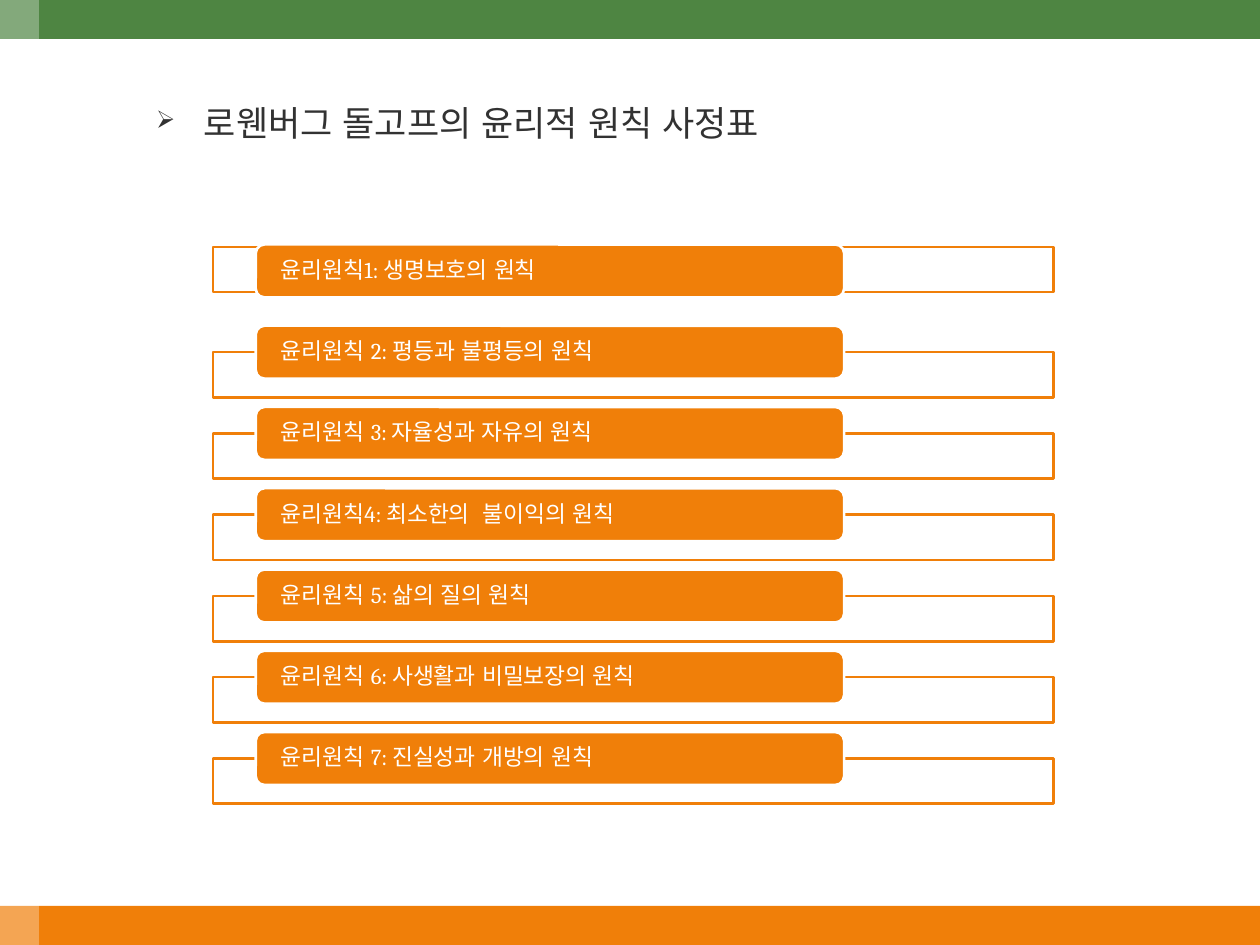
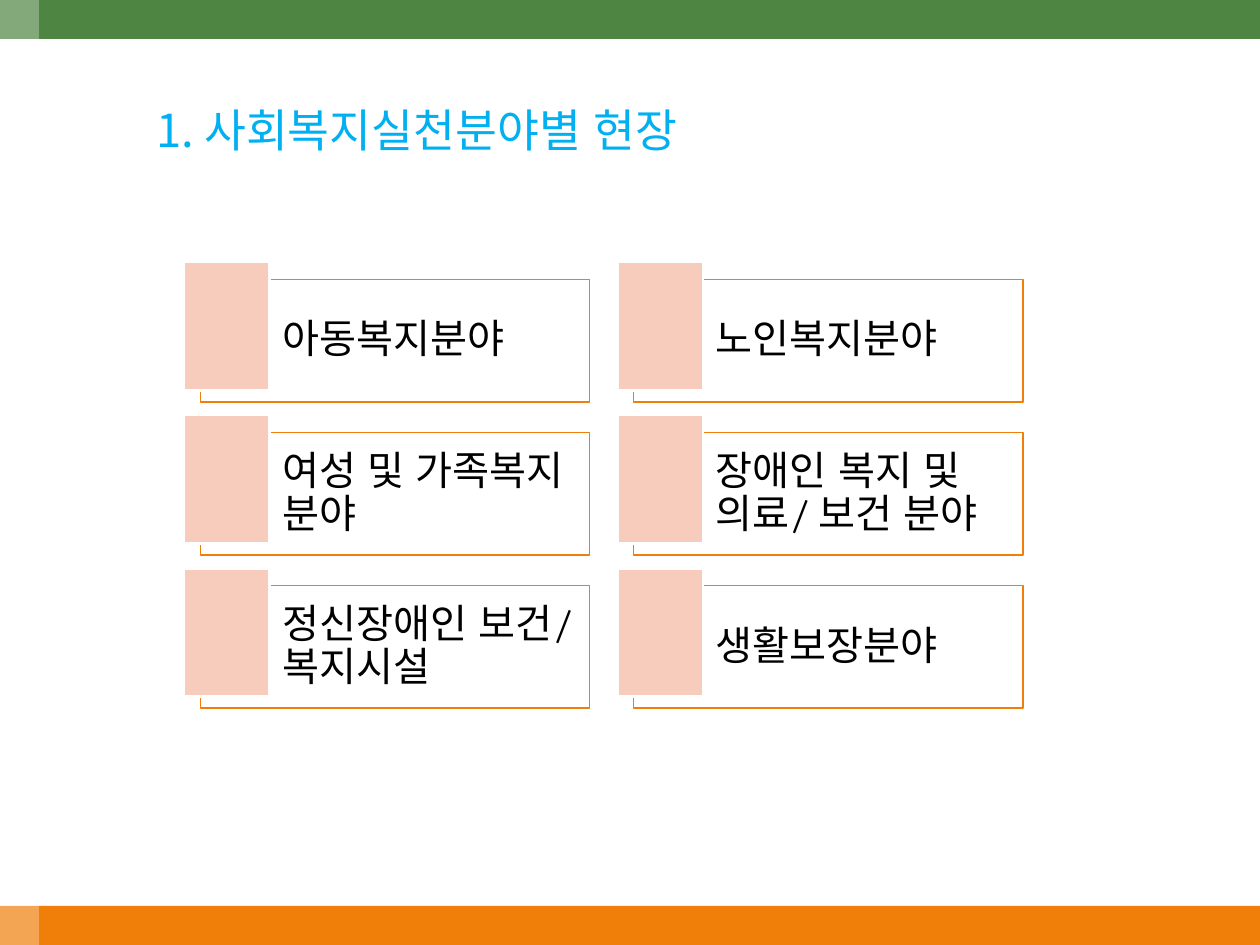
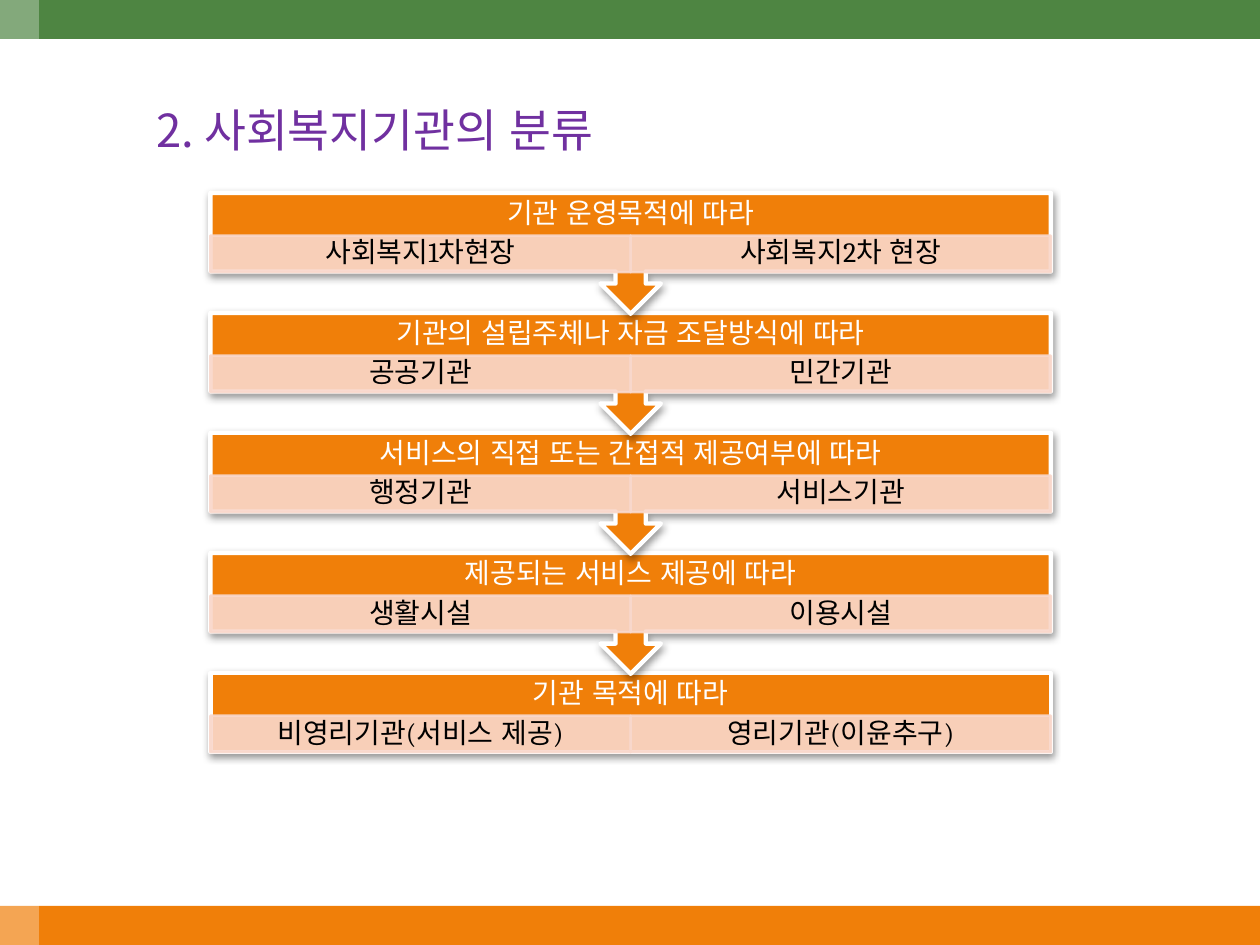
"""Build three slides on social work ethics, practice fields and agency types."""
from lxml import etree
from pptx import Presentation
from pptx.dml.color import RGBColor
from pptx.enum import lang, shapes, text
from pptx.oxml import ns
from pptx.util import Inches, Pt

HANGUL_FONT = "Noto Sans CJK KR"
BODY_FONT = "Cambria"
ORANGE = RGBColor(0xF0, 0x7F, 0x09)
GREEN = RGBColor(0x4E, 0x85, 0x42)
WHITE = RGBColor(0xFF, 0xFF, 0xFF)
BLACK = RGBColor(0, 0, 0)
CHARCOAL = RGBColor(0x32, 0x32, 0x32)
SKY = RGBColor(0x00, 0xB0, 0xF0)
PURPLE = RGBColor(0x70, 0x30, 0xA0)
PEACH = RGBColor(0xF8, 0xCC, 0xBD)
PALE_PEACH = RGBColor(0xF9, 0xD8, 0xCC)

PRINCIPLES = [
    "윤리원칙1: 생명보호의 원칙",
    "윤리원칙 2: 평등과 불평등의 원칙",
    "윤리원칙 3: 자율성과 자유의 원칙",
    "윤리원칙4: 최소한의  불이익의 원칙",
    "윤리원칙 5: 삶의 질의 원칙",
    "윤리원칙 6: 사생활과 비밀보장의 원칙",
    "윤리원칙 7: 진실성과 개방의 원칙",
]
FIELDS = [
    "아동복지분야", "노인복지분야",
    "여성 및 가족복지 분야", "장애인 복지 및 의료/ 보건 분야",
    "정신장애인 보건/ 복지시설", "생활보장분야",
]
CRITERIA = [
    ("기관 운영목적에 따라", ("사회복지1차현장", "사회복지2차 현장")),
    ("기관의 설립주체나 자금 조달방식에 따라", ("공공기관", "민간기관")),
    ("서비스의 직접 또는 간접적 제공여부에 따라", ("행정기관", "서비스기관")),
    ("제공되는 서비스 제공에 따라", ("생활시설", "이용시설")),
    ("기관 목적에 따라", ("비영리기관(서비스 제공)", "영리기관(이윤추구)")),
]

SLIDE_W, SLIDE_H, BAND = 10, 7.5, 0.31
SHAPE = shapes.MSO_SHAPE
ALIGN = text.PP_ALIGN


def set_all(target, **values):
    for key, value in values.items():
        setattr(target, key, value)


def fade(color_parent, percent):
    color = color_parent.find(".//" + ns.qn("a:srgbClr"))
    etree.SubElement(color, ns.qn("a:alpha"), val=str(percent * 1000))


def write(shape, words, size, color, font=BODY_FONT, align=ALIGN.LEFT,
          anchor=text.MSO_ANCHOR.MIDDLE, spacing=0.9, insets=(0.1, 0.05, 0.1, 0.05)):
    left, top, right, bottom = map(Inches, insets)
    set_all(shape.text_frame, word_wrap=True, vertical_anchor=anchor, margin_left=left,
            margin_top=top, margin_right=right, margin_bottom=bottom)
    paragraph = shape.text_frame.paragraphs[0]
    set_all(paragraph, alignment=align, line_spacing=spacing)
    run = paragraph.add_run()
    run.text = words
    set_all(run.font, size=Pt(size), name=font, language_id=lang.MSO_LANGUAGE_ID.KOREAN)
    run.font.color.rgb = color
    etree.SubElement(run._r.get_or_add_rPr(), ns.qn("a:ea"), typeface=HANGUL_FONT)
    return paragraph


def add_box(slide, place, fill, kind=SHAPE.RECTANGLE, opacity=100, line=None, width=1.5,
            line_opacity=100):
    box = slide.shapes.add_shape(kind, *map(Inches, place))
    box.shadow.inherit = False
    box.fill.solid()
    box.fill.fore_color.rgb = fill
    if opacity < 100:
        fade(box._element.spPr.find(ns.qn("a:solidFill")), opacity)
    if line is None:
        box.line.fill.background()
    else:
        box.line.color.rgb = line
        box.line.width = Pt(width)
        if line_opacity < 100:
            fade(box._element.spPr.find(ns.qn("a:ln")), line_opacity)
    return box


def add_label(slide, place, words, size, color, **style):
    label = slide.shapes.add_textbox(*map(Inches, place))
    return write(label, words, size, color, **style)


def cast_shadow(box):
    effects = box._element.spPr.find(ns.qn("a:effectLst"))
    shadow = etree.SubElement(effects, ns.qn("a:outerShdw"), blurRad=str(Pt(4.1)),
                              dist=str(Pt(2)), dir="5400000", rotWithShape="0")
    color = etree.SubElement(shadow, ns.qn("a:srgbClr"), val="000000")
    etree.SubElement(color, ns.qn("a:alpha"), val="40000")


def start_slide(deck, heading, size, color, indent, bullet=None):
    slide = deck.slides.add_slide(deck.slide_layouts[6])
    add_box(slide, (0, SLIDE_H - BAND, SLIDE_W, BAND), ORANGE)
    add_box(slide, (0, 0, SLIDE_W, BAND), GREEN)
    add_box(slide, (0, 0, BAND, SLIDE_H), WHITE, opacity=30)
    paragraph = add_label(slide, (1.14, 0.76, 7.8, 6.02), heading, size, color,
                          font=HANGUL_FONT, anchor=text.MSO_ANCHOR.TOP, spacing=1.0)
    properties = paragraph._p.get_or_add_pPr()
    properties.set("marL", str(Inches(indent)))
    properties.set("indent", str(-Inches(indent)))
    if bullet:
        etree.SubElement(properties, ns.qn("a:buSzPct"), val="70000")
        etree.SubElement(properties, ns.qn("a:buChar"), char=bullet)
    return slide


def build_principles(deck):
    slide = start_slide(deck, "로웬버그 돌고프의 윤리적 원칙 사정표", 20, CHARCOAL, 0.38, "➢")
    first_top, last_top = 1.94, 5.81
    pitch = (last_top - first_top) / (len(PRINCIPLES) - 1)
    for index, principle in enumerate(PRINCIPLES):
        top = first_top + index * pitch
        drop = 0.21 if index else 0.02
        add_box(slide, (1.69, top + drop, 6.67, 0.36), WHITE, opacity=90, line=ORANGE)
        pill = add_box(slide, (2.03, top, 4.67, 0.42), ORANGE, SHAPE.ROUNDED_RECTANGLE,
                       line=WHITE)
        write(pill, principle, 13, WHITE, insets=(0.18, 0, 0.18, 0))


def build_fields(deck):
    slide = start_slide(deck, "1. 사회복지실천분야별 현장", 26, SKY, 0.56)
    for index, field in enumerate(FIELDS):
        row, column = divmod(index, 2)
        left, top = 1.59 + column * 3.44, 2.22 + row * 1.215
        card = add_box(slide, (left, top, 3.09, 0.97), WHITE, opacity=40, line=ORANGE,
                       width=0.75)
        write(card, field, 23, BLACK, insets=(0.65, 0.1, 0.1, 0.1))
        add_box(slide, (left - 0.13, top - 0.14, 0.68, 1.02), PEACH, line=WHITE)


def build_criteria(deck):
    slide = start_slide(deck, "2. 사회복지기관의 분류", 26, PURPLE, 0.56)
    left, width, first_top, last_top = 1.67, 6.67, 1.53, 5.34
    last = len(CRITERIA) - 1
    pitch = (last_top - first_top) / last
    centred = {"align": ALIGN.CENTER, "insets": (0.12, 0, 0.12, 0)}
    for index in range(last, -1, -1):
        criterion, kinds = CRITERIA[index]
        top = first_top + index * pitch
        if index == last:
            step = add_box(slide, (left, top, width, 0.63), ORANGE, line=WHITE, width=2.5)
        else:
            step = add_box(slide, (left, top, width, 0.96), ORANGE,
                           SHAPE.UP_ARROW_CALLOUT, line=WHITE, width=2.5)
            step.rotation = 180
        cast_shadow(step)
        add_label(slide, (left, top, width, 0.34), criterion, 16, WHITE, **centred)
        for column, kind in enumerate(kinds):
            cell = add_box(slide, (left + column * width / 2, top + 0.34, width / 2, 0.29),
                           PALE_PEACH, opacity=90, line=PALE_PEACH, line_opacity=90)
            write(cell, kind, 16, BLACK, **centred)


def main():
    deck = Presentation()
    set_all(deck, slide_width=Inches(SLIDE_W), slide_height=Inches(SLIDE_H))
    build_principles(deck)
    build_fields(deck)
    build_criteria(deck)
    deck.save("out.pptx")


if __name__ == "__main__":
    main()
